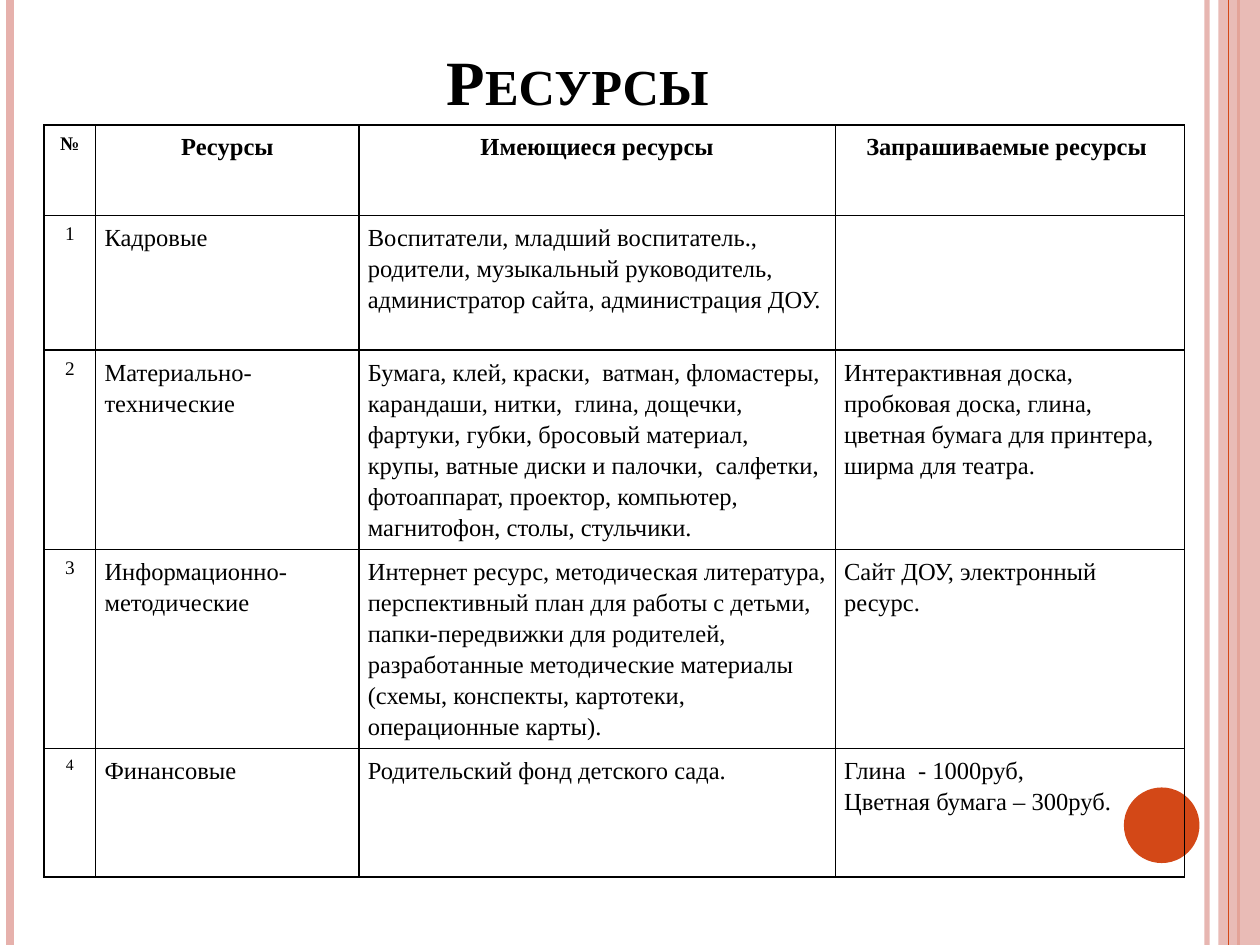
from lxml import etree
from pptx import Presentation
from pptx.dml.color import RGBColor
from pptx.enum.shapes import MSO_CONNECTOR, MSO_SHAPE
from pptx.enum.text import MSO_ANCHOR, PP_ALIGN
from pptx.oxml.ns import qn
from pptx.util import Inches, Pt

LINE, RECT, OVAL = MSO_CONNECTOR.STRAIGHT, MSO_SHAPE.RECTANGLE, MSO_SHAPE.OVAL
LEFT, CENTER, BOTTOM = PP_ALIGN.LEFT, PP_ALIGN.CENTER, MSO_ANCHOR.BOTTOM
BLACK = RGBColor(0x00, 0x00, 0x00)
PINK = RGBColor(0xE6, 0xB1, 0xAC)
ORANGE = RGBColor(0xD3, 0x48, 0x17)
FONT = "Times New Roman"
WIDTH, HEIGHT = 10, 7.5

COLS = [0.41, 2.09, 3.78, 2.77]
ROWS = [0.72, 1.07, 1.58, 1.58, 1.02]
NUMBER_SIZES = [11, 11, 11, 11, 9]
MARGINS = {"margin_left": 0.07, "margin_right": 0.07,
           "margin_top": 0.04, "margin_bottom": 0.04}
RESOURCES = [
    ("№", "Ресурсы", "Имеющиеся ресурсы", "Запрашиваемые ресурсы "),
    ("1", "Кадровые",
     "Воспитатели, младший воспитатель., родители, музыкальный руководитель, "
     "администратор сайта, администрация ДОУ.", ""),
    ("2", "Материально-технические",
     "Бумага, клей, краски,  ватман, фломастеры, карандаши, нитки,  глина, "
     "дощечки, фартуки, губки, бросовый материал,  крупы, ватные диски и "
     "палочки,  салфетки, фотоаппарат, проектор, компьютер, магнитофон, "
     "столы, стульчики.",
     "Интерактивная доска, пробковая доска, глина, цветная бумага для "
     "принтера, ширма для театра."),
    ("3", "Информационно-методические",
     "Интернет ресурс, методическая литература, перспективный план для работы "
     "с детьми, папки-передвижки для родителей, разработанные методические "
     "материалы (схемы, конспекты, картотеки, операционные карты).",
     "Сайт ДОУ, электронный ресурс."),
    ("4", "Финансовые", "Родительский фонд детского сада.",
     "Глина  - 1000руб,\nЦветная бумага – 300руб."),
]


def set_alpha(sp, percent):
    """Make the first colour of a shape partly transparent."""
    color = next(sp._element.spPr.iter(qn("a:srgbClr")))
    etree.SubElement(color, qn("a:alpha"), val=str(percent * 1000))


def add_stripe(slide, x, color, width, alpha=100):
    """Draw a vertical line over the full slide height."""
    sp = slide.shapes.add_connector(
        LINE, Inches(x), 0, Inches(x), Inches(HEIGHT))
    sp.line.color.rgb = color
    sp.line.width = Pt(width)
    etree.SubElement(sp._element.spPr, qn("a:effectLst"))
    set_alpha(sp, alpha)


def add_block(slide, kind, box, color, alpha=100):
    """Draw a filled shape without outline."""
    sp = slide.shapes.add_shape(kind, *map(Inches, box))
    sp.shadow.inherit = False
    sp.fill.solid()
    sp.fill.fore_color.rgb = color
    sp.line.fill.background()
    set_alpha(sp, alpha)


def format_text(p, align, size, bold):
    """Format a paragraph and its runs."""
    p.alignment = align
    values = {"name": FONT, "size": Pt(size), "bold": bold}
    for r in p.runs:
        for name, value in values.items():
            setattr(r.font, name, value)
        r.font.color.rgb = BLACK


def add_title(slide, text):
    """Fill the title placeholder with small caps."""
    sp = slide.shapes.title
    sp.left, sp.top, sp.width, sp.height = map(Inches, (0.5, 0.3, 8.17, 0.69))
    tf = sp.text_frame
    tf.text = text
    tf.vertical_anchor = BOTTOM
    p = tf.paragraphs[0]
    format_text(p, CENTER, 36, True)
    p.runs[0].font._element.set("cap", "small")


def add_borders(cell):
    """Put a thin black line on each side of a cell."""
    tc_pr = cell._tc.get_or_add_tcPr()
    for i, side in enumerate(("lnL", "lnR", "lnT", "lnB")):
        ln = etree.Element(qn(f"a:{side}"), w=str(Pt(1)))
        fill = etree.SubElement(ln, qn("a:solidFill"))
        etree.SubElement(fill, qn("a:srgbClr"), val=str(BLACK))
        tc_pr.insert(i, ln)


def fill_cell(cell, text, align, size, bold):
    """Write and format one table cell."""
    for name, value in MARGINS.items():
        setattr(cell, name, Inches(value))
    cell.fill.background()
    add_borders(cell)
    cell.text = text
    for p in cell.text_frame.paragraphs:
        p.line_spacing = 1.15
        format_text(p, align, size, bold)


def add_resources(slide):
    """Build the table of resources."""
    frame = slide.shapes.add_table(
        len(ROWS), len(COLS), Inches(0.35), Inches(0.99),
        Inches(sum(COLS)), Inches(sum(ROWS)))
    table = frame.table
    table.horz_banding = False
    for column, width in zip(table.columns, COLS):
        column.width = Inches(width)
    for i, (row, height) in enumerate(zip(table.rows, ROWS)):
        row.height = Inches(height)
        for j, text in enumerate(RESOURCES[i]):
            align = CENTER if i == 0 or j == 0 else LEFT
            size = NUMBER_SIZES[i] if j == 0 else 14
            fill_cell(table.cell(i, j), text, align, size, i == 0)


def main():
    """Build and save the slide."""
    prs = Presentation()
    prs.slide_width, prs.slide_height = Inches(WIDTH), Inches(HEIGHT)
    slide = prs.slides.add_slide(prs.slide_layouts[5])
    add_stripe(slide, 9.58, PINK, 3, 93)
    add_stripe(slide, 0.08, PINK, 4.5)
    add_stripe(slide, 9.83, ORANGE, 1.5)
    add_block(slide, RECT, (9.67, 0, 0.33, HEIGHT), PINK, 87)
    add_stripe(slide, 9.75, ORANGE, 0.75)
    add_block(slide, OVAL, (8.92, 6.25, 0.6, 0.6), ORANGE)
    add_title(slide, "Ресурсы")
    add_resources(slide)
    prs.save("out.pptx")


if __name__ == "__main__":
    main()
